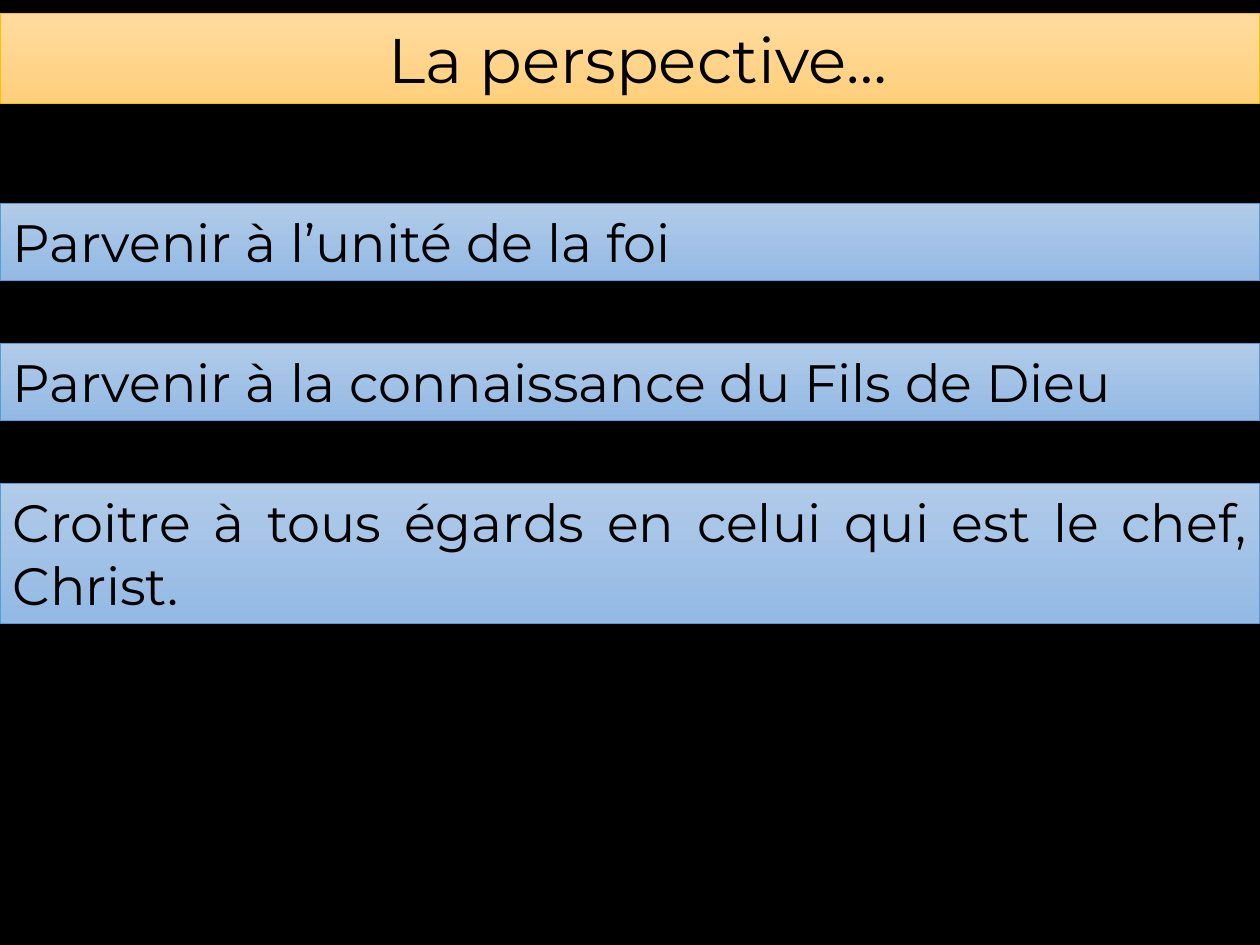
"""Build the slide "La perspective…": a title band and three goal bands on black."""
from pptx import Presentation
from pptx.dml.color import RGBColor
from pptx.enum.shapes import MSO_SHAPE as Shape
from pptx.enum.text import MSO_ANCHOR as Anchor, MSO_AUTO_SIZE as AutoSize, PP_ALIGN as Align
from pptx.util import Cm, Pt


def color(value):
    return RGBColor.from_string(value)


def add_band(slide, text, top, height, size, align, gradient, line):
    shape = slide.shapes.add_shape(Shape.RECTANGLE, Cm(0), Cm(top), Cm(25.4), Cm(height))
    shape.shadow.inherit = False
    shape.fill.gradient()
    shape.fill.gradient_angle = 270
    for stop, value in zip(shape.fill.gradient_stops, gradient):
        stop.color.rgb = color(value)
    shape.line.color.rgb = color(line)
    shape.line.width = Pt(0.5)
    frame = shape.text_frame
    frame.word_wrap = True
    frame.auto_size = AutoSize.SHAPE_TO_FIT_TEXT
    frame.vertical_anchor = Anchor.TOP
    paragraph = frame.paragraphs[0]
    paragraph.text = text
    paragraph.alignment = align
    paragraph.font.name = "Montserrat"
    paragraph.font.size = Pt(size)
    paragraph.font.color.rgb = color("000000")


presentation = Presentation()
presentation.slide_width = Cm(25.4)
presentation.slide_height = Cm(19.05)
slide = presentation.slides.add_slide(presentation.slide_layouts[6])
slide.background.fill.solid()
slide.background.fill.fore_color.rgb = color("000000")

add_band(slide, " La perspective…", 0.28, 1.8, 36, Align.CENTER, ("FFDB9E", "FFD07C"), "FFC000")

goals = [
    ("Parvenir à l’unité de la foi", 1.55),
    ("Parvenir à la connaissance du Fils de Dieu", 1.55),
    ("Croitre à tous égards en celui qui est le chef, Christ.", 2.82),
]
for index, (goal, height) in enumerate(goals):
    top = 4.11 + index * 2.82
    add_band(slide, goal, top, height, 30, Align.JUSTIFY, ("B1CBE9", "93B9E4"), "5B9BD5")

presentation.save("out.pptx")
